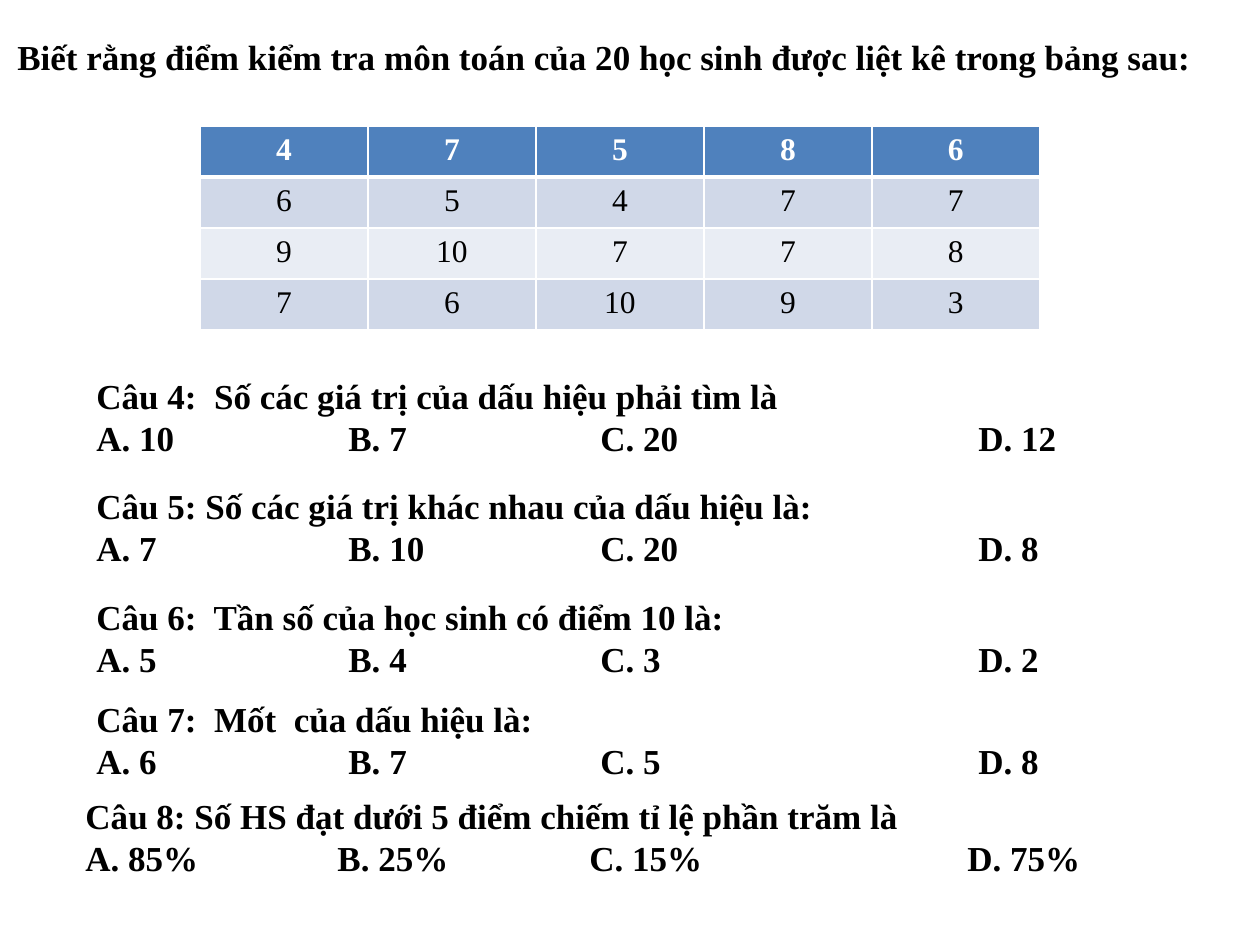
"""Build a maths quiz slide: a table of test scores and five multiple-choice questions."""
from dataclasses import dataclass

from lxml.etree import SubElement
from pptx import Presentation
from pptx.dml.color import RGBColor as Rgb
from pptx.enum.text import MSO_AUTO_SIZE as AutoSize, PP_ALIGN as Align
from pptx.oxml.ns import qn
from pptx.util import Pt

PX = 914400 / 126


@dataclass(frozen=True)
class Theme:
    font: str = "Times New Roman"
    ink: str = "000000"
    white: str = "FFFFFF"
    header: str = "4F81BD"
    bands: tuple = ("D0D8E8", "E9EDF4")
    text_size: int = 20
    score_size: int = 18
    thin: int = 1
    thick: int = 3


theme = Theme()


def px(length):
    return round(length * PX)


def style(paragraph, size, color, bold):
    for run in paragraph.runs:
        run.font.name = theme.font
        run.font.size = Pt(size)
        run.font.bold = bold
        run.font.color.rgb = Rgb.from_string(color)


deck = Presentation()
deck.slide_width, deck.slide_height = px(1260), px(945)
slide = deck.slides.add_slide(deck.slide_layouts[6])

heading = slide.shapes.add_textbox(px(5), px(29), px(1207), px(55)).text_frame
heading.word_wrap = False
heading.auto_size = AutoSize.SHAPE_TO_FIT_TEXT
heading.text = "Biết rằng điểm kiểm tra môn toán của 20 học sinh được liệt kê trong bảng sau:"
style(heading.paragraphs[0], theme.text_size, theme.ink, True)

scores = [
    [4, 7, 5, 8, 6],
    [6, 5, 4, 7, 7],
    [9, 10, 7, 7, 8],
    [7, 6, 10, 9, 3],
]
score_table = slide.shapes.add_table(4, 5, px(200), px(126), px(840), px(204)).table
for row, values in enumerate(scores):
    is_header = row == 0
    for column, score in enumerate(values):
        cell = score_table.cell(row, column)
        cell.text = str(score)
        entry = cell.text_frame.paragraphs[0]
        entry.alignment = Align.CENTER
        style(entry, theme.score_size, theme.white if is_header else theme.ink, is_header)
        properties = cell._tc.get_or_add_tcPr()
        for side in ("lnL", "lnR", "lnT", "lnB"):
            under_header = (row, side) in ((0, "lnB"), (1, "lnT"))
            width = theme.thick if under_header else theme.thin
            border = SubElement(properties, qn(f"a:{side}"), w=str(Pt(width)))
            SubElement(SubElement(border, qn("a:solidFill")), qn("a:srgbClr"), val=theme.white)
        cell.fill.solid()
        cell.fill.fore_color.rgb = Rgb.from_string(
            theme.header if is_header else theme.bands[(row - 1) % 2])

questions = [
    (84, 368, 1050, "Câu 4:  Số các giá trị của dấu hiệu phải tìm là", ("10", "7", "20", "12")),
    (84, 478, 977, "Câu 5: Số các giá trị khác nhau của dấu hiệu là:", ("7", "10", "20", "8")),
    (84, 589, 1092, "Câu 6:  Tần số của học sinh có điểm 10 là:", ("5", "4", "3", "2")),
    (84, 691, 1050, "Câu 7:  Mốt  của dấu hiệu là:", ("6", "7", "5", "8")),
    (73, 788, 1040, "Câu 8: Số HS đạt dưới 5 điểm chiếm tỉ lệ phần trăm là",
     ("85%", "25%", "15%", "75%")),
]
for left, top, width, question, answers in questions:
    frame = slide.shapes.add_textbox(px(left), px(top), px(width), px(97)).text_frame
    frame.word_wrap = True
    frame.auto_size = AutoSize.SHAPE_TO_FIT_TEXT
    frame.text = question
    choices = frame.add_paragraph()
    choices.text = "\t".join(f"{letter}. {answer}" for letter, answer in zip("ABCD", answers))
    tab_stops = SubElement(choices._p.get_or_add_pPr(), qn("a:tabLst"))
    for stop in (252, 504, 882):
        SubElement(tab_stops, qn("a:tab"), pos=str(px(stop)), algn="l")
    for paragraph in frame.paragraphs:
        style(paragraph, theme.text_size, theme.ink, True)

deck.save("out.pptx")
